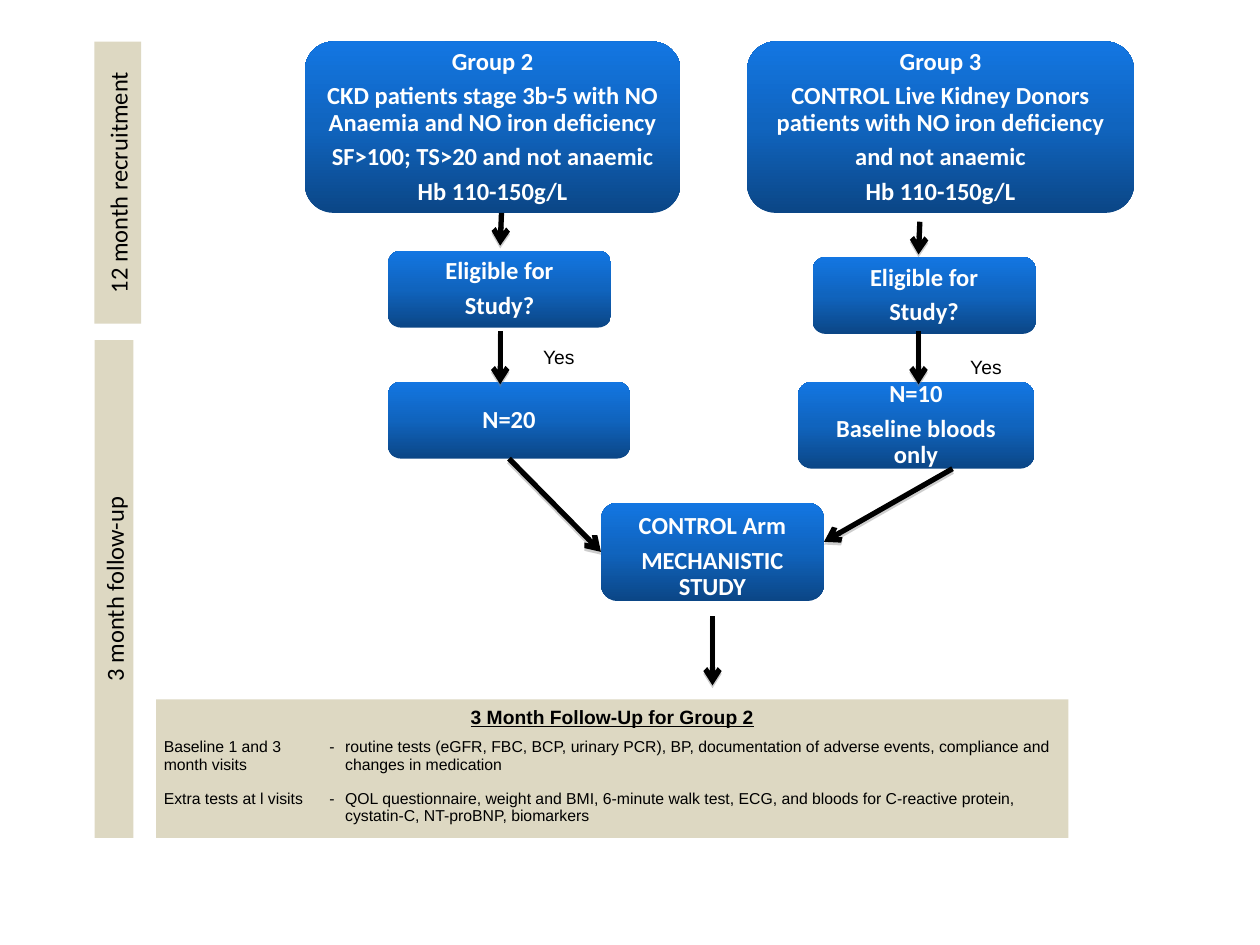
from copy import deepcopy
from dataclasses import dataclass

from lxml import etree
from pptx import Presentation
from pptx.dml.color import RGBColor
from pptx.enum.shapes import MSO_CONNECTOR, MSO_SHAPE
from pptx.enum.text import MSO_ANCHOR, PP_ALIGN
from pptx.oxml.ns import qn
from pptx.util import Inches, Pt

RECTANGLE = MSO_SHAPE.RECTANGLE
PROCESS = MSO_SHAPE.FLOWCHART_ALTERNATE_PROCESS
STRAIGHT = MSO_CONNECTOR.STRAIGHT
CENTER, LEFT = PP_ALIGN.CENTER, PP_ALIGN.LEFT
TOP, MIDDLE = MSO_ANCHOR.TOP, MSO_ANCHOR.MIDDLE
LEFT_SIDE, BOTTOM_SIDE = 1, 2

BEIGE = RGBColor(0xDD, 0xD8, 0xC2)
BLACK = RGBColor(0x00, 0x00, 0x00)
WHITE = RGBColor(0xFF, 0xFF, 0xFF)
SHADOW = RGBColor(0x80, 0x80, 0x80)
GRADIENT = [
    (0, RGBColor(0x0B, 0x46, 0x86)),
    (0.5, RGBColor(0x10, 0x64, 0xBE)),
    (1, RGBColor(0x13, 0x76, 0xE2)),
]
NO_GRID_STYLE = "{2D5ABB26-0587-4C30-8999-92F81FD0307C}"

SLIDE_WIDTH, SLIDE_HEIGHT = Inches(10), Inches(7.5)
GRID_COLUMNS, GRID_ROWS = 100, 75


def grid_x(columns):
    """Return the length of a number of grid columns."""
    return round(SLIDE_WIDTH * columns / GRID_COLUMNS)


def grid_y(rows):
    """Return the length of a number of grid rows."""
    return round(SLIDE_HEIGHT * rows / GRID_ROWS)


@dataclass
class Box:
    """A region measured in grid columns and rows."""

    left: float
    top: float
    width: float
    height: float

    def inner(self, left, top, width, height):
        """Return a box placed relative to this one."""
        return Box(self.left + left, self.top + top, width, height)

    def point(self, left, top):
        """Return a grid point relative to this box."""
        return self.left + left, self.top + top

    def lengths(self):
        """Return left, top, width and height for python-pptx."""
        return grid_x(self.left), grid_y(self.top), grid_x(self.width), grid_y(self.height)


def write_text(frame, lines, font="Arial", size=11, color=BLACK, bold=False, underline=False,
               align=CENTER, anchor=TOP, line_spacing=None, space_after=None):
    """Write one paragraph for each line of text."""
    frame.word_wrap = True
    frame.vertical_anchor = anchor
    for index, line in enumerate(lines):
        paragraph = frame.add_paragraph() if index else frame.paragraphs[0]
        paragraph.alignment = align
        paragraph.line_spacing = line_spacing
        paragraph.space_after = space_after
        run = paragraph.add_run()
        run.text = line
        run.font.name, run.font.size = font, Pt(size)
        run.font.bold, run.font.underline = bold, underline
        run.font.color.rgb = color


def add_block(slide, kind, box):
    """Add a beige shape without outline or shadow."""
    shape = slide.shapes.add_shape(kind, *box.lengths())
    shape.shadow.inherit = False
    shape.line.fill.background()
    shape.fill.solid()
    shape.fill.fore_color.rgb = BEIGE
    return shape


def add_node(slide, box, lines, anchor=MIDDLE):
    """Add a blue gradient flowchart node."""
    node = add_block(slide, PROCESS, box)
    node.fill.gradient()
    node.fill.gradient_angle = 90
    stop_list = node._element.spPr.find(qn("a:gradFill")).find(qn("a:gsLst"))
    stop_list.append(deepcopy(stop_list[-1]))
    for stop, (position, color) in zip(node.fill.gradient_stops, GRADIENT):
        stop.position, stop.color.rgb = position, color
    write_text(node.text_frame, lines, font="Calibri", size=14, color=WHITE, bold=True,
               anchor=anchor, line_spacing=0.9, space_after=Pt(4.6))
    return node


def add_arrow(slide, start, end):
    """Add a black arrow with a shadow between two grid points."""
    arrow = slide.shapes.add_connector(
        STRAIGHT, grid_x(start[0]), grid_y(start[1]), grid_x(end[0]), grid_y(end[1]))
    arrow.line.color.rgb = BLACK
    arrow.line.width = Pt(3)
    properties = arrow._element.spPr
    etree.SubElement(properties.find(qn("a:ln")), qn("a:tailEnd"), type="arrow")
    effects = etree.SubElement(properties, qn("a:effectLst"))
    shadow = etree.SubElement(effects, qn("a:outerShdw"), blurRad="0", dist="20000",
                              dir="5400000", rotWithShape="0")
    color = etree.SubElement(shadow, qn("a:srgbClr"), val=str(SHADOW))
    etree.SubElement(color, qn("a:alpha"), val="38000")
    return arrow


def add_period(slide, box, label):
    """Add a time bar whose label reads upwards."""
    bar = add_block(slide, RECTANGLE, box)
    write_text(bar.text_frame, [label], font="Calibri", size=14, anchor=MIDDLE)
    bar._element.txBody.bodyPr.set("vert", "vert270")


def add_group(slide, box, criteria, enrolled, axis, first_arrow, eligible, enrolment, yes):
    """Add one recruitment column and return its enrolment node."""
    add_node(slide, box.inner(0, 0, box.width, 13.6), criteria)
    add_node(slide, box.inner(*eligible, 17.7, 6.1), ["Eligible for", "Study?"])
    node = add_node(slide, box.inner(*enrolment), enrolled)
    add_arrow(slide, box.point(axis + 0.1, first_arrow), box.point(axis, first_arrow + 2.6))
    add_arrow(slide, box.point(axis, 23), box.point(axis, 27.2))
    label = slide.shapes.add_textbox(*box.inner(*yes, 8.1, 2.9).lengths())
    write_text(label.text_frame, ["Yes"])
    return node


def add_control_arm(slide, box, group_2, group_3_exit):
    """Add the shared study node with its arrows in and out."""
    node = add_node(slide, box, ["CONTROL Arm", "MECHANISTIC STUDY"], anchor=TOP)
    entry = add_arrow(slide, (40.4, 36.4), box.point(0, box.height / 2))
    entry.begin_connect(group_2, BOTTOM_SIDE)
    entry.end_connect(node, LEFT_SIDE)
    add_arrow(slide, group_3_exit, box.point(box.width, 3.1))
    add_arrow(slide, box.point(box.width / 2, 9), box.point(box.width / 2, 14.5))


def add_follow_up(slide, box, title, rows):
    """Add the follow-up panel with its table of visits."""
    panel = add_block(slide, RECTANGLE, box)
    write_text(panel.text_frame, [title], bold=True, underline=True)
    frame = slide.shapes.add_table(len(rows), 3, *box.inner(0.6, 3.1, 71.8, 8.2).lengths())
    table = frame.table
    table._tbl.tblPr.find(qn("a:tableStyleId")).text = NO_GRID_STYLE
    table.first_row = table.horz_banding = False
    for column, width in zip(table.columns, (12.3, 2.1, 57.4)):
        column.width = grid_x(width)
    for row_index, (visit, tests) in enumerate(rows):
        for column_index, text in enumerate((visit, "-", tests)):
            cell = table.cell(row_index, column_index)
            cell.fill.background()
            cell.margin_left = cell.margin_right = cell.margin_top = cell.margin_bottom = 0
            write_text(cell.text_frame, [text], size=9, align=CENTER if text == "-" else LEFT)


def main():
    """Build the study flowchart and save it."""
    presentation = Presentation()
    presentation.slide_width, presentation.slide_height = SLIDE_WIDTH, SLIDE_HEIGHT
    slide = presentation.slides.add_slide(presentation.slide_layouts[6])
    add_follow_up(slide, Box(12.4, 55.5, 72.4, 11), "3 Month Follow-Up for Group 2", [
        ("Baseline 1 and 3 month visits",
         "routine tests (eGFR, FBC, BCP, urinary PCR), BP, documentation of adverse events, "
         "compliance and changes in medication"),
        ("Extra tests at l visits",
         "QOL questionnaire, weight and BMI, 6-minute walk test, ECG, and bloods for "
         "C-reactive protein, cystatin-C, NT-proBNP, biomarkers"),
    ])
    add_period(slide, Box(7.5, 3.3, 3.7, 22.4), "12 month recruitment")
    add_period(slide, Box(7.5, 27, 3.1, 39.5), "3 month follow-up")
    group_2 = add_group(
        slide, Box(24.2, 3.3, 29.8, 33.1),
        ["Group 2", "CKD patients stage 3b-5 with NO Anaemia and NO iron deficiency",
         "SF>100; TS>20 and not anaemic", "Hb 110-150g/L"],
        ["N=20"], axis=15.5, first_arrow=13.6, eligible=(6.6, 16.6),
        enrolment=(6.6, 27, 19.2, 6.1), yes=(16.1, 23.6))
    add_group(
        slide, Box(59.3, 3.3, 30.7, 33.9),
        ["Group 3", "CONTROL Live Kidney Donors patients with NO iron deficiency",
         "and not anaemic", "Hb 110-150g/L"],
        ["N=10", "Baseline bloods only"], axis=13.6, first_arrow=14.3, eligible=(5.2, 17.1),
        enrolment=(4, 27, 18.8, 6.9), yes=(14.9, 24.4))
    add_control_arm(slide, Box(47.7, 39.9, 17.7, 7.8), group_2, (75.6, 37.2))
    presentation.save("out.pptx")


if __name__ == "__main__":
    main()
